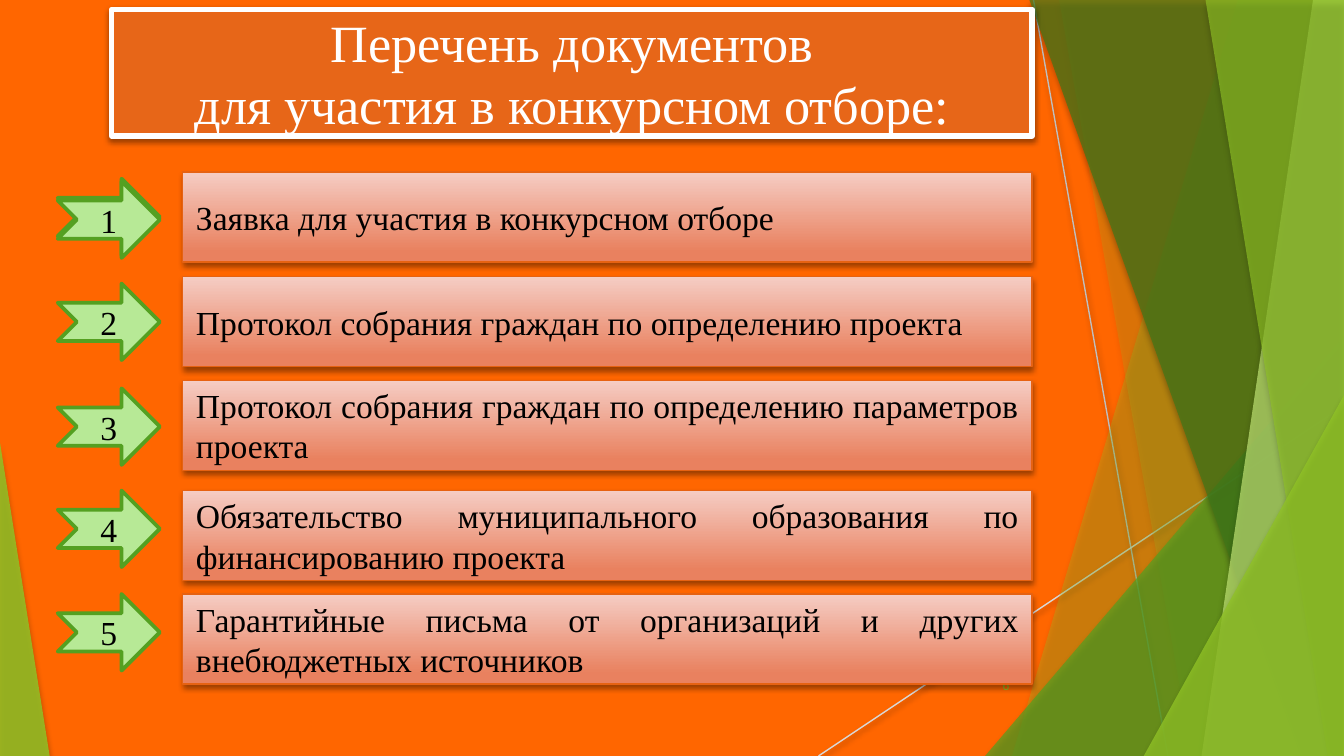
"""Build the slide that lists the documents needed for the competitive selection."""
from lxml import etree
from pptx import Presentation
from pptx.dml.color import RGBColor
from pptx.enum import shapes, text
from pptx.oxml import ns
from pptx.util import Inches, Pt

ORANGE = RGBColor(0xFF, 0x66, 0x00)
TITLE_FILL = RGBColor(0xE7, 0x66, 0x18)
BOX_LINE = RGBColor(0xE6, 0x62, 0x12)
BOX_DARK = RGBColor(0xE9, 0x81, 0x5F)
BOX_LIGHT = RGBColor(0xF5, 0xCD, 0xC4)
ARROW_FILL = RGBColor(0xB7, 0xE9, 0x96)
GREEN = RGBColor(0x54, 0xA0, 0x21)
LIME = RGBColor(0x90, 0xC2, 0x26)
FOREST = RGBColor(0x3F, 0x78, 0x19)
PALE = RGBColor(0xC0, 0xE4, 0x74)
GRAY = RGBColor(0xBF, 0xBF, 0xBF)
LIGHT_GRAY = RGBColor(0xD9, 0xD9, 0xD9)
WHITE = RGBColor(0xFF, 0xFF, 0xFF)
BLACK = RGBColor(0, 0, 0)

WIDTH = 10
HEIGHT = WIDTH * 9 / 16
SERIF = "Times New Roman"
TITLE = "Перечень документов\vдля участия в конкурсном отборе:"
PAGE_NUMBER = "6"
DOCUMENTS = [
    (1.28, 1.35, "Заявка для участия в конкурсном отборе"),
    (2.06, 2.11, "Протокол собрания граждан по определению проекта"),
    (2.83, 2.89, "Протокол собрания граждан по определению параметров проекта"),
    (3.65, 3.65, "Обязательство муниципального образования по финансированию проекта"),
    (4.42, 4.42, "Гарантийные письма от организаций и других внебюджетных источников"),
]
RAYS = [((7.69, 0), (8.69, HEIGHT), GRAY), ((10, 3.02), (6.09, HEIGHT), LIGHT_GRAY)]
FACETS = [
    ("band", (9.21, 7.53), LIME, 30),
    ("band", (7.88, 8.87), LIME, 20),
    ("triangle", (7.33, 2.5, 2.67, 1), GREEN, 72),
    ("band", (7.66, 9.68), FOREST, 70),
    ("band", (9.77, 8.94), PALE, 70),
    ("band", (8.97, 9.88), LIME, 65),
    ("triangle", (8.51, 2.94, 1.49, 1), LIME, 80),
    ("triangle", (0, 3.29, 0.37, 0), LIME, 85),
]


def write(shape, words, *, size, color, align, font=SERIF):
    frame = shape.text_frame
    frame.word_wrap = True
    frame.auto_size = text.MSO_AUTO_SIZE.NONE
    frame.vertical_anchor = text.MSO_ANCHOR.MIDDLE
    paragraph = frame.paragraphs[0]
    paragraph.text = words
    paragraph.alignment = align
    for run in paragraph.runs:
        run.font.size = Pt(size)
        run.font.name = font
        run.font.color.rgb = color


def paint(shape, fill, line=None, width=0):
    shape.fill.solid()
    shape.fill.fore_color.rgb = fill
    outline(shape, line, width)


def outline(shape, line, width):
    if line is None:
        shape.line.fill.background()
    else:
        shape.line.color.rgb = line
        shape.line.width = Pt(width)


def cast_shadow(shape, opacity=38, blur=3.1, distance=1.6):
    effects = etree.SubElement(shape._element.spPr, ns.qn("a:effectLst"))
    shadow = etree.SubElement(effects, ns.qn("a:outerShdw"), blurRad=str(Pt(blur)),
                              dist=str(Pt(distance)), dir="5400000", rotWithShape="0")
    tint = etree.SubElement(shadow, ns.qn("a:srgbClr"), val="000000")
    etree.SubElement(tint, ns.qn("a:alpha"), val=str(opacity * 1000))


def add_preset(slide, preset, *box):
    return slide.shapes.add_shape(preset, *map(Inches, box))


def add_ray(slide, start, end, color):
    ray = slide.shapes.add_connector(shapes.MSO_CONNECTOR.STRAIGHT, *map(Inches, start + end))
    outline(ray, color, 0.75)
    cast_shadow(ray)


def add_facet(slide, kind, geometry, color, opacity):
    if kind == "band":
        top_x, bottom_x = geometry
        corners = [(WIDTH, 0), (WIDTH, HEIGHT), (bottom_x, HEIGHT)]
        builder = slide.shapes.build_freeform(Inches(top_x), 0)
        builder.add_line_segments([(Inches(x), Inches(y)) for x, y in corners])
        facet = builder.convert_to_shape()
    else:
        left, top, width, apex = geometry
        facet = add_preset(slide, shapes.MSO_SHAPE.ISOSCELES_TRIANGLE,
                           left, top, width, HEIGHT - top)
        facet.adjustments[0] = apex
    paint(facet, color)
    tint = facet._element.spPr.find(ns.qn("a:solidFill"))[0]
    etree.SubElement(tint, ns.qn("a:alpha"), val=str(opacity * 1000))
    cast_shadow(facet, 35, 3, 2)


def add_arrow(slide, top, words):
    arrow = add_preset(slide, shapes.MSO_SHAPE.NOTCHED_RIGHT_ARROW, 0.43, top, 0.76, 0.57)
    paint(arrow, ARROW_FILL, GREEN, 2)
    arrow.shadow.inherit = False
    write(arrow, words, size=18, color=BLACK, align=text.PP_ALIGN.CENTER)


def add_document(slide, number, box_top, arrow_top, words):
    box = add_preset(slide, shapes.MSO_SHAPE.RECTANGLE, 1.36, box_top, 6.32, 0.67)
    box.fill.gradient()
    box.fill.gradient_angle = 90
    for stop, position, color in zip(box.fill.gradient_stops, (0.12, 1), (BOX_DARK, BOX_LIGHT)):
        stop.position = position
        stop.color.rgb = color
    outline(box, BOX_LINE, 0.75)
    cast_shadow(box)
    write(box, words, size=18, color=BLACK, align=text.PP_ALIGN.JUSTIFY)
    add_arrow(slide, arrow_top, str(number))


def place_title(slide):
    title = slide.shapes.title
    title.left, title.top, title.width, title.height = map(Inches, (0.83, 0.07, 6.85, 0.94))
    paint(title, TITLE_FILL, WHITE, 3)
    cast_shadow(title)
    write(title, TITLE, size=28, color=WHITE, align=text.PP_ALIGN.CENTER)
    slide.shapes._spTree.append(title._element)


def main():
    deck = Presentation()
    deck.slide_width, deck.slide_height = Inches(WIDTH), Inches(HEIGHT)
    slide = deck.slides.add_slide(deck.slide_layouts[5])
    slide.background.fill.solid()
    slide.background.fill.fore_color.rgb = ORANGE
    for ray in RAYS:
        add_ray(slide, *ray)
    for facet in FACETS:
        add_facet(slide, *facet)
    page = slide.shapes.add_textbox(*map(Inches, (7.05, 4.95, 0.56, 0.3)))
    write(page, PAGE_NUMBER, size=6.8, color=LIME, align=text.PP_ALIGN.RIGHT, font="Roboto")
    place_title(slide)
    add_arrow(slide, 1.33, "1")
    for number, document in enumerate(DOCUMENTS, 1):
        add_document(slide, number, *document)
    deck.save("out.pptx")


if __name__ == "__main__":
    main()
